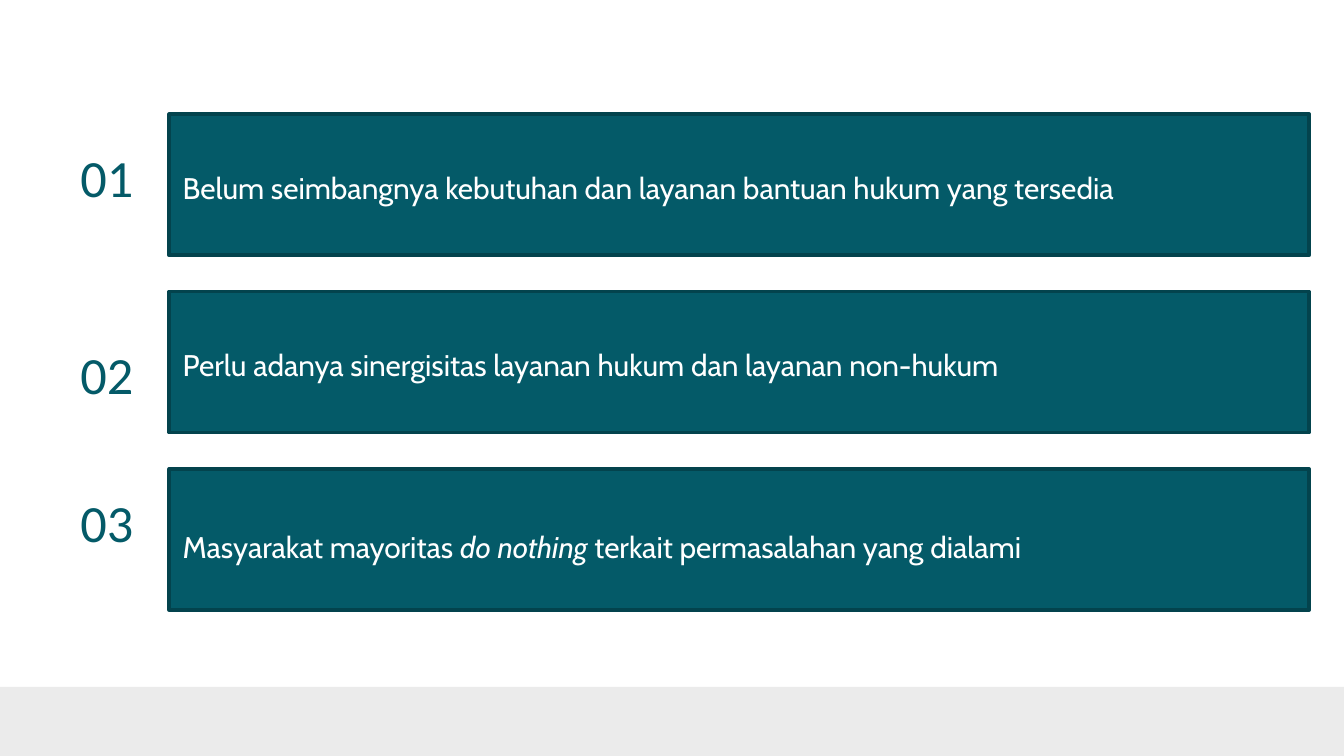
"""Build a slide with three numbered findings on legal aid."""

from typing import NamedTuple

from pptx import Presentation
from pptx.dml.color import RGBColor
from pptx.enum.shapes import MSO_SHAPE
from pptx.enum.text import MSO_ANCHOR, PP_ALIGN
from pptx.shapes.autoshape import Shape
from pptx.slide import Slide
from pptx.util import Pt

RECTANGLE = MSO_SHAPE.RECTANGLE
TOP, MIDDLE = MSO_ANCHOR.TOP, MSO_ANCHOR.MIDDLE
LEFT, RIGHT = PP_ALIGN.LEFT, PP_ALIGN.RIGHT

WHITE = RGBColor(0xFF, 0xFF, 0xFF)
TEAL = RGBColor(0x04, 0x5A, 0x68)
DARK_TEAL = RGBColor(0x03, 0x43, 0x4D)
PALE_GREY = RGBColor(0xEB, 0xEB, 0xEB)

SLIDE_WIDTH, SLIDE_HEIGHT = 720, 405
FOOTER_TOP = 368
BAR_LEFT, BAR_TOP, BAR_WIDTH, BAR_HEIGHT = 90.7, 61.2, 610.6, 75.6
BAR_PITCH = 95
NUMBER_LEFT, NUMBER_WIDTH, NUMBER_HEIGHT = 18.7, 59.8, 35.3
INSET = 7.2


class Area(NamedTuple):
    left: float
    top: float
    width: float
    height: float


class Span(NamedTuple):
    text: str
    italic: bool = False


class Finding(NamedTuple):
    number: str
    number_top: float
    spans: list[Span]
    text_height: float = BAR_HEIGHT


FINDINGS = [
    Finding("01", 70.6, [
        Span("Belum seimbangnya kebutuhan dan layanan bantuan hukum yang tersedia"),
    ]),
    Finding("02", 176.4, [
        Span("Perlu adanya sinergisitas layanan hukum dan layanan non-hukum"),
    ]),
    Finding("03", 255.6, [
        Span("Masyarakat mayoritas "),
        Span("do nothing ", italic=True),
        Span("terkait permasalahan yang dialami"),
    ], text_height=79.9),
]


def add_rectangle(page: Slide, area: Area, fill: RGBColor) -> Shape:
    """Add a filled rectangle without outline or shadow."""
    box = page.shapes.add_shape(RECTANGLE, *map(Pt, area))
    box.shadow.inherit = False
    box.fill.solid()
    box.fill.fore_color.rgb = fill
    box.line.fill.background()
    return box


def add_text(page: Slide, area: Area, spans: list[Span], *, font: str, size: float,
             color: RGBColor, align: PP_ALIGN = LEFT, anchor: MSO_ANCHOR = TOP,
             line_spacing: float = 1.0) -> None:
    """Add a text box holding one paragraph of spans."""
    frame = page.shapes.add_textbox(*map(Pt, area)).text_frame
    frame.word_wrap = True
    frame.vertical_anchor = anchor
    frame.margin_left = frame.margin_right = Pt(INSET)
    frame.margin_top = frame.margin_bottom = Pt(INSET)
    para = frame.paragraphs[0]
    para.alignment = align
    para.line_spacing = line_spacing
    for span in spans:
        run = para.add_run()
        run.text = span.text
        run.font.name = font
        run.font.size = Pt(size)
        run.font.italic = span.italic
        run.font.color.rgb = color


def add_finding(page: Slide, finding: Finding, top: float) -> None:
    """Add a bar with its statement and its number."""
    bar = add_rectangle(page, Area(BAR_LEFT, top, BAR_WIDTH, BAR_HEIGHT), TEAL)
    bar.line.color.rgb = DARK_TEAL
    bar.line.width = Pt(2)
    add_text(page, Area(BAR_LEFT, top, BAR_WIDTH, finding.text_height), finding.spans,
             font="Cabin", size=16, color=WHITE, anchor=MIDDLE, line_spacing=1.15)
    add_text(page, Area(NUMBER_LEFT, finding.number_top, NUMBER_WIDTH, NUMBER_HEIGHT),
             [Span(finding.number)], font="Calibri", size=28, color=TEAL, align=RIGHT)


def main() -> None:
    """Build and save the deck."""
    deck = Presentation()
    deck.slide_width, deck.slide_height = Pt(SLIDE_WIDTH), Pt(SLIDE_HEIGHT)
    page = deck.slides.add_slide(deck.slide_layouts[6])
    page.background.fill.solid()
    page.background.fill.fore_color.rgb = WHITE
    add_rectangle(page, Area(0, FOOTER_TOP, SLIDE_WIDTH, SLIDE_HEIGHT - FOOTER_TOP),
                  PALE_GREY)
    for index, finding in enumerate(FINDINGS):
        add_finding(page, finding, BAR_TOP + index * BAR_PITCH)
    deck.save("out.pptx")


if __name__ == "__main__":
    main()
